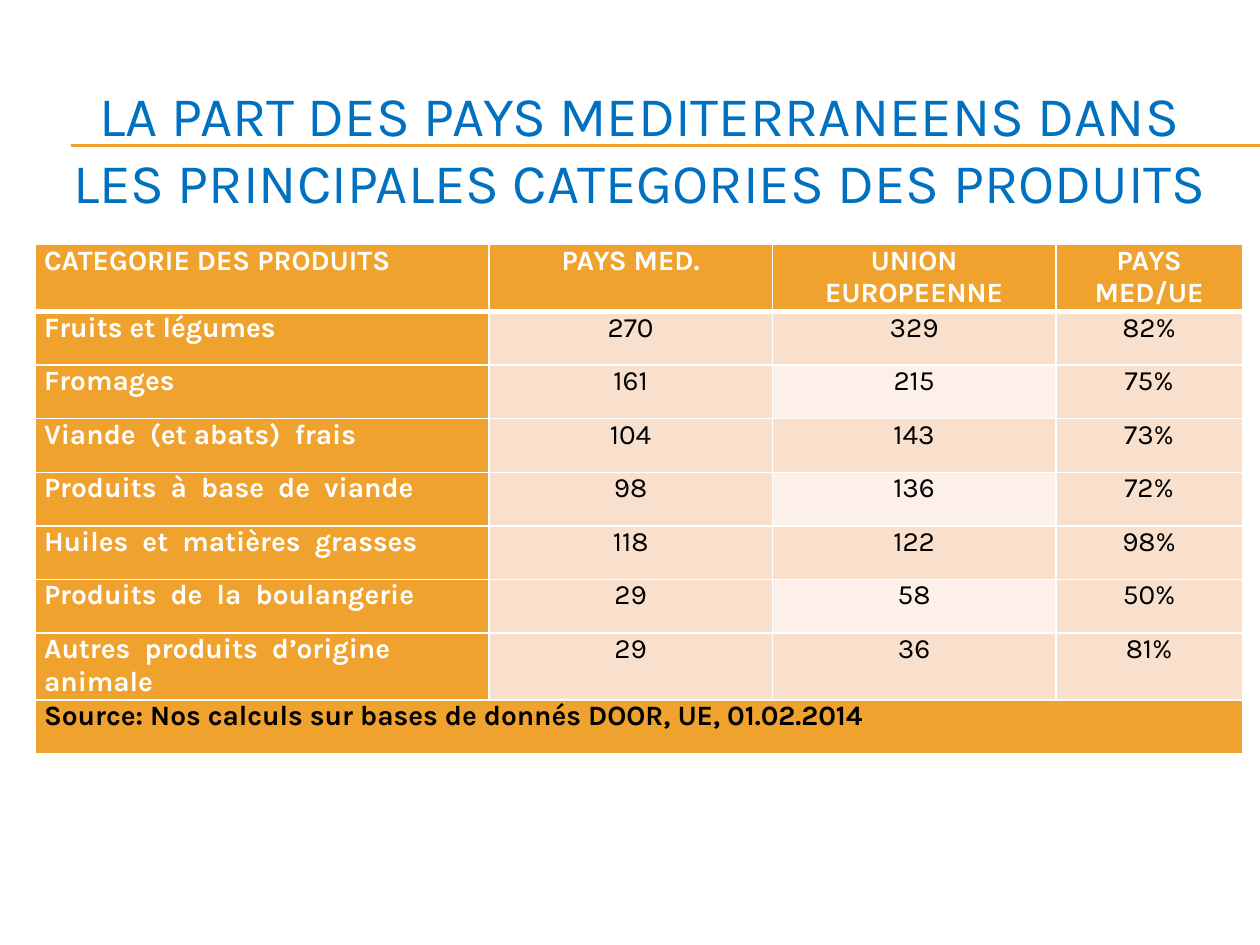
from lxml.etree import SubElement
from pptx import Presentation
from pptx.dml.color import RGBColor as Rgb
from pptx.enum.shapes import MSO_CONNECTOR as Connector
from pptx.enum.text import MSO_ANCHOR as Anchor, PP_ALIGN as Align
from pptx.oxml.ns import qn
from pptx.util import Inches, Pt

FONT = "Karla"
COLORS = {
    "title": "0070C0", "accent": "F0A22E", "white": "FFFFFF",
    "black": "000000", "band": "F9E0CD", "pale": "FCF0E8",
}
HEADINGS = ["CATEGORIE DES PRODUITS", "PAYS MED.", "UNION EUROPEENNE", "PAYS MED/UE"]
PRODUCTS = [
    ("Fruits et légumes", "270", "329", "82%"),
    ("Fromages", "161", "215", "75%"),
    ("Viande  (et abats)  frais", "104", "143", "73%"),
    ("Produits  à  base  de  viande", "98", "136", "72%"),
    ("Huiles  et  matières  grasses", "118", "122", "98%"),
    ("Produits  de  la  boulangerie", "29", "58", "50%"),
    ("Autres  produits  d’origine  animale", "29", "36", "81%"),
]
SOURCE = "Source: Nos calculs sur bases de donnés DOOR, UE, 01.02.2014"
COLUMN_WIDTHS = [3.6, 2.25, 2.25, 1.48]
HEADER_HEIGHT = 0.39
EU_COLUMN = 2


def color(key):
    return Rgb.from_string(COLORS[key])


def write(frame, text, size, ink, align, bold=False):
    paragraph = frame.paragraphs[0]
    paragraph.alignment = align
    run = paragraph.add_run()
    run.text = text
    run.font.name, run.font.size, run.font.bold = FONT, Pt(size), bold
    run.font.color.rgb = color(ink)


def add_rules(slide, left, top, right, gap):
    for y in (top, top + gap):
        rule = slide.shapes.add_connector(
            Connector.STRAIGHT, Inches(left), Inches(y), Inches(right), Inches(y))
        rule.line.color.rgb = color("accent")
        rule.line.width = Pt(0.75)
        SubElement(rule._element.spPr, qn("a:effectLst"))


def add_title(slide, left, top, width, height):
    title = slide.shapes.add_textbox(*map(Inches, (left, top, width, height)))
    frame = title.text_frame
    frame.word_wrap = True
    frame.vertical_anchor = Anchor.MIDDLE
    write(frame, "LA PART DES PAYS MEDITERRANEENS DANS LES PRINCIPALES CATEGORIES DES PRODUITS",
          32, "title", Align.CENTER)


def set_borders(cell, top=1, bottom=1):
    properties = cell._tc.get_or_add_tcPr()
    for side, points in {"L": 1, "R": 1, "T": top, "B": bottom}.items():
        border = SubElement(properties, qn(f"a:ln{side}"), w=str(Pt(points)))
        fill = SubElement(border, qn("a:solidFill"))
        SubElement(fill, qn("a:srgbClr"), val=COLORS["white"])


def style_cell(cell, text, fill, ink, align, bold, **borders):
    set_borders(cell, **borders)
    cell.fill.solid()
    cell.fill.fore_color.rgb = color(fill)
    cell.margin_left = cell.margin_right = Inches(0.07)
    cell.margin_top = cell.margin_bottom = 0
    if text:
        write(cell.text_frame, text, 16, ink, align, bold)


def add_product_table(slide, left, top, width, height):
    last = len(PRODUCTS) + 1
    table = slide.shapes.add_table(
        last + 1, len(HEADINGS), *map(Inches, (left, top, width, height))).table
    table.first_row = table.horz_banding = False
    for column, share in zip(table.columns, COLUMN_WIDTHS):
        column.width = Inches(width * share / sum(COLUMN_WIDTHS))
    for row in table.rows:
        row.height = Inches((height - HEADER_HEIGHT) / last)
    table.rows[0].height = Inches(HEADER_HEIGHT)

    # Header and product rows
    for r, texts in enumerate([HEADINGS, *PRODUCTS]):
        for c, text in enumerate(texts):
            strong = r == 0 or c == 0
            striped = "pale" if c == EU_COLUMN and r % 2 == 0 else "band"
            style_cell(table.cell(r, c), text,
                       "accent" if strong else striped,
                       "white" if strong else "black",
                       Align.CENTER if c else Align.LEFT, strong,
                       top=3 if r == 1 else 1, bottom=3 if r == 0 else 1)

    # Source row across all columns
    table.cell(last, 0).merge(table.cell(last, len(HEADINGS) - 1))
    for c in range(len(HEADINGS)):
        style_cell(table.cell(last, c), "" if c else SOURCE,
                   "accent", "black", Align.LEFT, True)


def main():
    deck = Presentation()
    deck.slide_width, deck.slide_height = Inches(10), Inches(7.5)
    slide = deck.slides.add_slide(deck.slide_layouts[6])
    add_rules(slide, 0.56, 1.15, 10, 0.01)
    add_title(slide, 0.33, 0.71, 9.5, 0.92)
    add_product_table(slide, 0.28, 1.94, 9.58, 3.79)
    deck.save("out.pptx")


if __name__ == "__main__":
    main()
